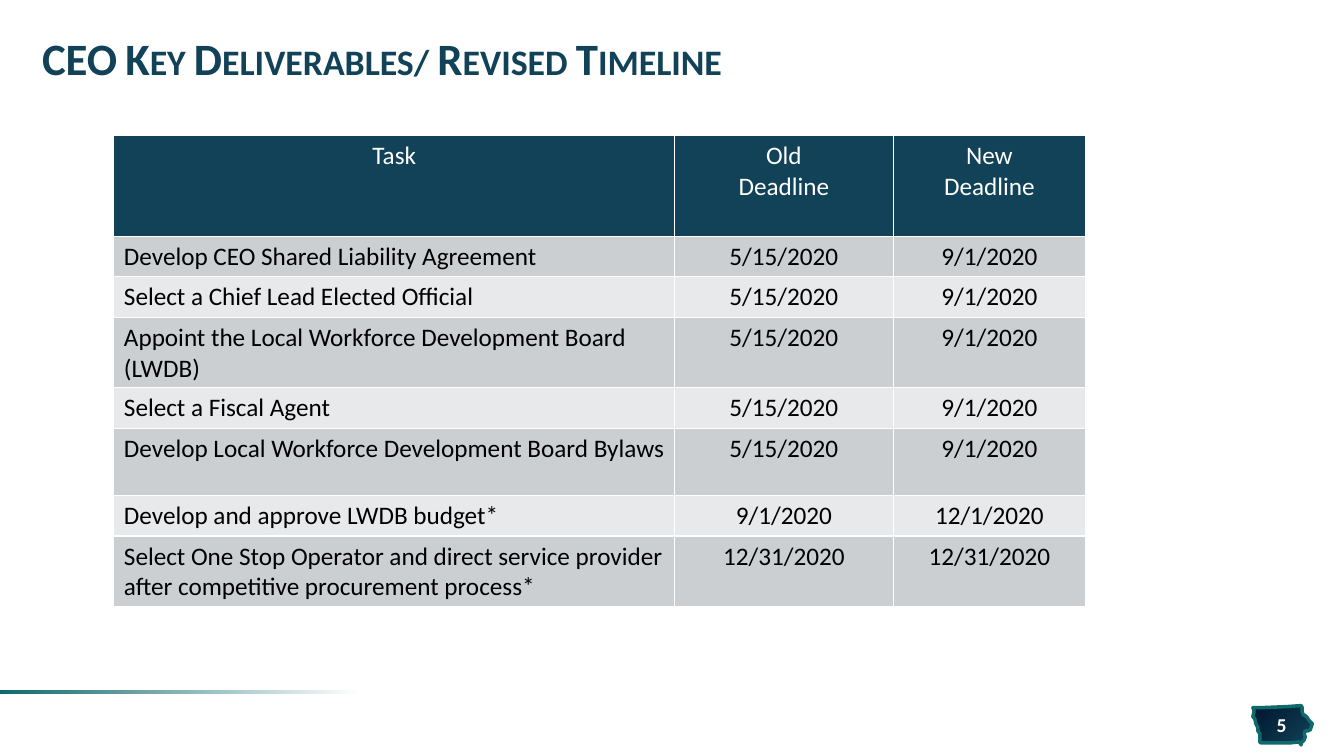
"""Build the slide with the revised timeline of CEO key deliverables."""
from lxml.etree import SubElement
from pptx import Presentation
from pptx.dml.color import RGBColor
from pptx.enum.shapes import MSO_SHAPE
from pptx.enum.text import MSO_ANCHOR, PP_ALIGN
from pptx.oxml.ns import qn
from pptx.util import Cm, Pt

COLORS = {
    "navy": "114257",
    "midnight": "00162E",
    "teal": "0F6A6B",
    "white": "FFFFFF",
    "black": "000000",
    "band_dark": "CCCFD1",
    "band_light": "E7E9EA",
}
FONT = "Calibri"


def add_text(paragraph, text, size, color, bold=False, align=PP_ALIGN.LEFT):
    """Add one formatted run to a paragraph and return the run."""
    paragraph.alignment = align
    run = paragraph.add_run()
    run.text = text
    run.font.name = FONT
    run.font.size = Pt(size)
    run.font.bold = bold
    run.font.color.rgb = RGBColor.from_string(COLORS[color])
    return run


def set_gradient(shape, stops, angle):
    """Fill a shape with a two-stop linear gradient."""
    shape.shadow.inherit = False
    shape.fill.gradient()
    shape.fill.gradient_angle = angle
    for stop, (position, color) in zip(shape.fill.gradient_stops, stops):
        stop.position = position
        stop.color.rgb = RGBColor.from_string(COLORS[color])


presentation = Presentation()
presentation.slide_width = Cm(33.87)
presentation.slide_height = Cm(19.05)
slide = presentation.slides.add_slide(presentation.slide_layouts[6])

STATE_OUTLINE = [
    (1291, 700), (1277, 701), (1253, 702), (1243, 702), (1244, 704),
    (1244, 707), (1243, 711), (1245, 713), (1246, 718), (1248, 722),
    (1248, 725), (1250, 728), (1250, 736), (1251, 737), (1280, 737),
    (1289, 736), (1291, 739), (1291, 737), (1294, 734), (1295, 731),
    (1294, 728), (1295, 725), (1298, 725), (1300, 724), (1301, 721),
    (1302, 718), (1299, 715), (1297, 712), (1295, 710), (1293, 709),
    (1292, 706), (1292, 702),
]
builder = slide.shapes.build_freeform(*STATE_OUTLINE[0], scale=Cm(0.0254))
builder.add_line_segments(STATE_OUTLINE[1:], close=True)
state = builder.convert_to_shape()
set_gradient(state, [(0, "midnight"), (1, "navy")], 315)
state.line.color.rgb = RGBColor.from_string(COLORS["teal"])
state.line.width = Pt(2.5)

footer_bar = slide.shapes.add_shape(MSO_SHAPE.RECTANGLE, 0, Cm(17.4), Cm(9.65), Cm(0.08))
set_gradient(footer_bar, [(0.06, "white"), (1, "teal")], 180)
footer_bar.line.fill.background()

number_frame = slide.shapes.add_textbox(Cm(31.65), Cm(17.98), Cm(1.3), Cm(0.58)).text_frame
number_frame.word_wrap = True
number_frame.margin_left = number_frame.margin_right = 0
number_frame.vertical_anchor = MSO_ANCHOR.MIDDLE
number = add_text(number_frame.paragraphs[0], "5", 14, "white", True, PP_ALIGN.CENTER)
number.font._element.set("spc", "50")

title_frame = slide.shapes.add_textbox(Cm(0.81), Cm(0.61), Cm(32.23), Cm(1.9)).text_frame
title_frame.word_wrap = True
title_frame.vertical_anchor = MSO_ANCHOR.MIDDLE
title_frame.paragraphs[0].line_spacing = 0.85
title = add_text(title_frame.paragraphs[0], "CEO Key Deliverables/ Revised Timeline", 32, "navy", True)
title.font._element.set("cap", "small")

COLUMN_WIDTHS = [14.13, 5.51, 4.85]
HEADER, SINGLE, DOUBLE = 2.54, 0.99, 1.7
TIMELINE = [
    (HEADER, "Task", "Old\nDeadline", "New\nDeadline"),
    (SINGLE, "Develop CEO Shared Liability Agreement", "5/15/2020", "9/1/2020"),
    (SINGLE, "Select a Chief Lead Elected Official", "5/15/2020", "9/1/2020"),
    (DOUBLE, "Appoint the Local Workforce Development Board (LWDB)", "5/15/2020", "9/1/2020"),
    (SINGLE, "Select a Fiscal Agent", "5/15/2020", "9/1/2020"),
    (DOUBLE, "Develop Local Workforce Development Board Bylaws", "5/15/2020", "9/1/2020"),
    (SINGLE, "Develop and approve LWDB budget*", "9/1/2020", "12/1/2020"),
    (DOUBLE, "Select One Stop Operator and direct service provider after competitive procurement process*",
     "12/31/2020", "12/31/2020"),
]
table = slide.shapes.add_table(
    len(TIMELINE), len(COLUMN_WIDTHS), Cm(2.87), Cm(3.42),
    Cm(sum(COLUMN_WIDTHS)), Cm(sum(row[0] for row in TIMELINE)),
).table
for column, width in zip(table.columns, COLUMN_WIDTHS):
    column.width = Cm(width)

for row_index, (height, *texts) in enumerate(TIMELINE):
    table.rows[row_index].height = Cm(height)
    is_header = row_index == 0
    band = "navy" if is_header else "band_dark" if row_index % 2 else "band_light"
    for column_index, text in enumerate(texts):
        cell = table.cell(row_index, column_index)
        properties = cell._tc.get_or_add_tcPr()
        for side in ("lnL", "lnR", "lnT", "lnB"):
            border = SubElement(properties, qn(f"a:{side}"), w=str(Pt(1)))
            border_fill = SubElement(border, qn("a:solidFill"))
            SubElement(border_fill, qn("a:srgbClr"), val=COLORS["white"])
        cell.fill.solid()
        cell.fill.fore_color.rgb = RGBColor.from_string(COLORS[band])
        align = PP_ALIGN.CENTER if is_header or column_index else PP_ALIGN.LEFT
        frame = cell.text_frame
        for line_index, line in enumerate(text.split("\n")):
            paragraph = frame.add_paragraph() if line_index else frame.paragraphs[0]
            add_text(paragraph, line, 18, "white" if is_header else "black", align=align)

presentation.save("out.pptx")
